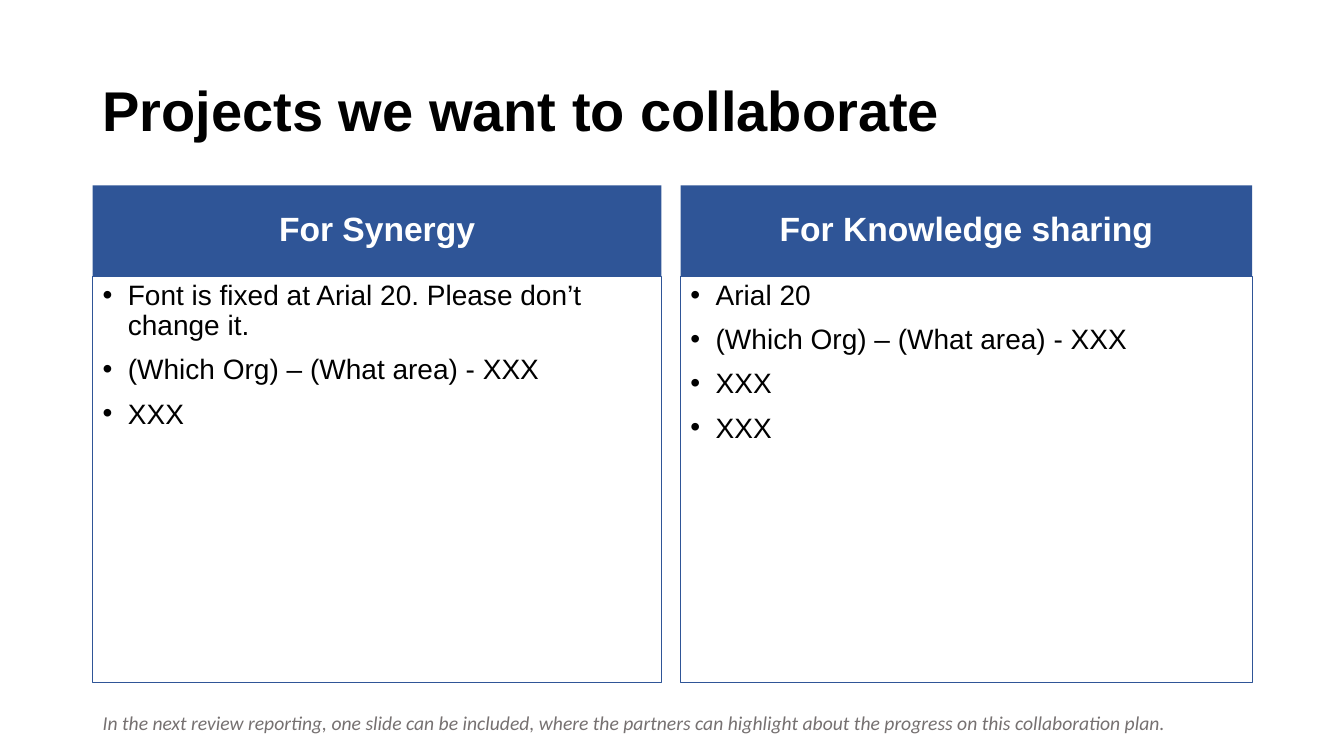
from dataclasses import dataclass

from lxml import etree
from pptx import Presentation
from pptx.dml.color import RGBColor
from pptx.enum.shapes import MSO_SHAPE
from pptx.enum.text import MSO_ANCHOR, MSO_AUTO_SIZE, PP_ALIGN
from pptx.oxml.ns import qn
from pptx.util import Emu, Pt

RECTANGLE = MSO_SHAPE.RECTANGLE
TOP, MIDDLE = MSO_ANCHOR.TOP, MSO_ANCHOR.MIDDLE
LEFT, CENTER = PP_ALIGN.LEFT, PP_ALIGN.CENTER
GROW = MSO_AUTO_SIZE.SHAPE_TO_FIT_TEXT

EMU_PER_PX = 9144
BLUE, WHITE, BLACK, GREY = "2F5597", "FFFFFF", "000000", "767171"
MARGIN = 92
HEADER_TOP, HEADER_HEIGHT, BODY_HEIGHT = 184, 90, 403
BULLET_INDENT = 25

TITLE_FONT = {"name": "Arial", "size": Pt(40), "bold": True}
HEADER_FONT = {"name": "Arial", "size": Pt(24), "bold": True}
BODY_FONT = {"name": "Arial", "size": Pt(20)}
NOTE_FONT = {"name": "Calibri", "size": Pt(14), "italic": True}

TIGHT = {"alignment": LEFT, "line_spacing": 0.9}
HEADING = {"alignment": CENTER, "line_spacing": 0.9, "space_before": Pt(10)}
LISTING = {"alignment": LEFT, "line_spacing": 0.9, "space_before": Pt(10)}
PLAIN = {"alignment": LEFT}


@dataclass
class Column:
    left: int
    width: int
    heading: str
    items: list[str]


COLUMNS = [
    Column(MARGIN, 564, "For Synergy", [
        "Font is fixed at Arial 20. Please don’t change it.",
        "(Which Org) – (What area) - XXX",
        "XXX",
    ]),
    Column(675, 567, "For Knowledge sharing", [
        "Arial 20",
        "(Which Org) – (What area) - XXX",
        "XXX",
        "XXX",
    ]),
]


def px(*lengths: int) -> list[Emu]:
    return [Emu(length * EMU_PER_PX) for length in lengths]


def color(value: str) -> RGBColor:
    return RGBColor.from_string(value)


def write(box, lines: list[str], font: dict, ink: str, layout: dict, anchor) -> None:
    frame = box.text_frame
    frame.word_wrap = True
    frame.vertical_anchor = anchor
    for index, line in enumerate(lines):
        para = frame.add_paragraph() if index else frame.paragraphs[0]
        for key, value in layout.items():
            setattr(para, key, value)
        span = para.add_run()
        span.text = line
        for key, value in font.items():
            setattr(span.font, key, value)
        span.font.color.rgb = color(ink)


def add_text(page, bounds: tuple, line: str, font: dict, ink: str, layout: dict, anchor):
    box = page.shapes.add_textbox(*px(*bounds))
    write(box, [line], font, ink, layout, anchor)
    return box


def add_panel(page, bounds: tuple):
    panel = page.shapes.add_shape(RECTANGLE, *px(*bounds))
    panel.shadow.inherit = False
    return panel


def add_bullets(box) -> None:
    (indent,) = px(BULLET_INDENT)
    for para in box.text_frame.paragraphs:
        properties = para._p.get_or_add_pPr()
        properties.set("marL", str(indent))
        properties.set("indent", str(-indent))
        etree.SubElement(properties, qn("a:buFont")).set("typeface", "Arial")
        etree.SubElement(properties, qn("a:buChar")).set("char", "•")


def add_column(page, column: Column) -> None:
    header = add_panel(page, (column.left, HEADER_TOP, column.width, HEADER_HEIGHT))
    header.fill.solid()
    header.fill.fore_color.rgb = color(BLUE)
    header.line.fill.background()
    write(header, [column.heading], HEADER_FONT, WHITE, HEADING, MIDDLE)

    body_top = HEADER_TOP + HEADER_HEIGHT
    body = add_panel(page, (column.left, body_top, column.width, BODY_HEIGHT))
    body.fill.background()
    body.line.color.rgb = color(BLUE)
    body.line.width = Pt(0.75)
    write(body, column.items, BODY_FONT, BLACK, LISTING, TOP)
    add_bullets(body)


def main() -> None:
    deck = Presentation()
    deck.slide_width, deck.slide_height = px(1333, 750)
    page = deck.slides.add_slide(deck.slide_layouts[6])

    add_text(page, (MARGIN, 40, 1150, 145), "Projects we want to collaborate",
             TITLE_FONT, BLACK, TIGHT, MIDDLE)
    for column in COLUMNS:
        add_column(page, column)
    note = add_text(
        page, (MARGIN, 700, 1216, 34),
        "In the next review reporting, one slide can be included, where the partners "
        "can highlight about the progress on this collaboration plan.",
        NOTE_FONT, GREY, PLAIN, TOP)
    note.text_frame.auto_size = GROW

    deck.save("out.pptx")


if __name__ == "__main__":
    main()
